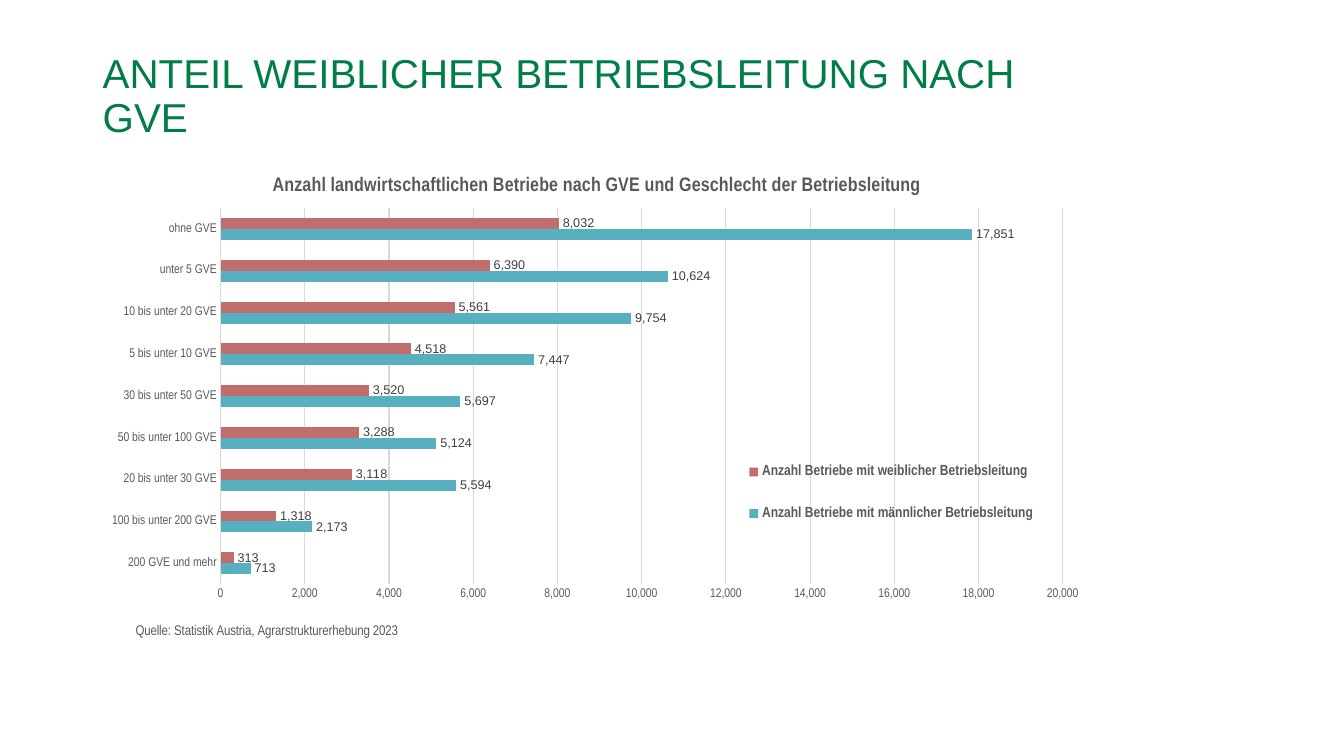
from lxml import etree
from pptx import Presentation
from pptx.chart.data import CategoryChartData
from pptx.dml.color import RGBColor
from pptx.enum.chart import XL_CHART_TYPE, XL_LABEL_POSITION, XL_LEGEND_POSITION, XL_TICK_MARK
from pptx.enum.text import MSO_ANCHOR
from pptx.oxml.ns import qn
from pptx.util import Inches, Pt

BAR_CLUSTERED = XL_CHART_TYPE.BAR_CLUSTERED
OUTSIDE_END = XL_LABEL_POSITION.OUTSIDE_END
LEGEND_BOTTOM = XL_LEGEND_POSITION.BOTTOM
NO_TICK = XL_TICK_MARK.NONE
MIDDLE = MSO_ANCHOR.MIDDLE

CATEGORIES = [
    "200 GVE und mehr", "100 bis unter 200 GVE", "20 bis unter 30 GVE",
    "50 bis unter 100 GVE", "30 bis unter 50 GVE", "5 bis unter 10 GVE",
    "10 bis unter 20 GVE", "unter 5 GVE", "ohne GVE",
]
SERIES = [
    ("Anzahl Betriebe mit männlicher Betriebsleitung", "58AFC0",
     [713, 2173, 5594, 5124, 5697, 7447, 9754, 10624, 17851]),
    ("Anzahl Betriebe mit weiblicher Betriebsleitung", "C06E6C",
     [313, 1318, 3118, 3288, 3520, 4518, 5561, 6390, 8032]),
]


def color(value):
    return RGBColor.from_string(value)


class SlideBuilder:
    FONT = "Arial"
    NARROW = "Arial Narrow"
    GREEN = "007E46"
    GRAY = "595959"
    DARK = "404040"
    GRID = "D9D9D9"
    NUMBER_FORMAT = "#,##0"

    def __init__(self, slide):
        self.slide = slide

    def set_font(self, font, size, value, name, bold=False):
        font.size = Pt(size)
        font.color.rgb = color(value)
        font.name = name
        font.bold = bold

    def place(self, element, inner=False, **fractions):
        """Fix a chart part at fractions of the chart's width and height."""
        for old_layout in element.findall(qn("c:layout")):
            element.remove(old_layout)
        layout = etree.Element(qn("c:layout"))
        manual = etree.SubElement(layout, qn("c:manualLayout"))
        settings = [("xMode", "edge"), ("yMode", "edge"), *fractions.items()]
        if inner:
            settings.insert(0, ("layoutTarget", "inner"))
        for name, value in settings:
            etree.SubElement(manual, qn("c:" + name)).set("val", str(value))
        overlay = element.find(qn("c:overlay"))
        if overlay is None:
            element.insert(0, layout)
        else:
            overlay.addprevious(layout)

    def heading(self, text, left, top, width, height):
        box = self.slide.shapes.add_textbox(
            Inches(left), Inches(top), Inches(width), Inches(height))
        frame = box.text_frame
        frame.word_wrap = True
        frame.vertical_anchor = MIDDLE
        paragraph = frame.paragraphs[0]
        paragraph.text = text
        paragraph.line_spacing = 0.9
        self.set_font(paragraph.font, 28.8, self.GREEN, self.FONT)

    def chart_text(self, title, text, size, bold, x, y):
        paragraph = title.text_frame.paragraphs[0]
        paragraph.text = text
        self.set_font(paragraph.font, size, self.GRAY, self.NARROW, bold)
        self.place(title._element, x=x, y=y)

    def axis(self, axis):
        axis.major_tick_mark = axis.minor_tick_mark = NO_TICK
        self.set_font(axis.tick_labels.font, 9, self.GRAY, self.NARROW)

    def bar_chart(self, title, source, left, top, width, height):
        data = CategoryChartData(number_format=self.NUMBER_FORMAT)
        data.categories = CATEGORIES
        for name, _, values in SERIES:
            data.add_series(name, values)
        chart = self.slide.shapes.add_chart(
            BAR_CLUSTERED, Inches(left), Inches(top),
            Inches(width), Inches(height), data).chart
        self.set_font(chart.font, 10, "000000", self.FONT)
        chart.has_title = True
        self.chart_text(chart.chart_title, title, 14, True, 0.175, 0.035)

        # Axes
        category_axis, value_axis = chart.category_axis, chart.value_axis
        self.axis(category_axis)
        self.axis(value_axis)
        value_axis.minimum_scale = 0
        value_axis.maximum_scale = 20000
        value_axis.major_unit = 2000
        value_axis.tick_labels.number_format = self.NUMBER_FORMAT
        value_axis.tick_labels.number_format_is_linked = False
        value_axis.format.line.fill.background()
        for line in (category_axis.format.line, value_axis.major_gridlines.format.line):
            line.color.rgb = color(self.GRID)
            line.width = Pt(0.75)
        value_axis.has_title = True
        self.chart_text(value_axis.axis_title, source, 10, False, 0.04, 0.89)

        # Bars and their values
        plot = chart.plots[0]
        plot.gap_width = 182
        plot.overlap = 0
        plot.vary_by_categories = False
        for series, (_, fill, _) in zip(plot.series, SERIES):
            series.format.fill.solid()
            series.format.fill.fore_color.rgb = color(fill)
            series.invert_if_negative = False
            labels = series.data_labels
            labels.show_value = True
            labels.position = OUTSIDE_END
            labels.number_format = self.NUMBER_FORMAT
            labels.number_format_is_linked = False
            self.set_font(labels.font, 9, self.DARK, self.FONT)
        plot_area = chart._chartSpace.chart.plotArea
        self.place(plot_area, inner=True, x=0.127, y=0.106, w=0.836, h=0.712)

        # Legend
        chart.has_legend = True
        legend = chart.legend
        legend.position = LEGEND_BOTTOM
        legend.include_in_layout = False
        self.set_font(legend.font, 10.5, self.GRAY, self.NARROW, True)
        self.place(legend._element, x=0.643, y=0.54, w=0.3, h=0.21)


def main():
    presentation = Presentation()
    presentation.slide_width = Inches(13.33)
    presentation.slide_height = Inches(7.5)
    builder = SlideBuilder(presentation.slides.add_slide(presentation.slide_layouts[6]))
    builder.heading("ANTEIL WEIBLICHER BETRIEBSLEITUNG NACH GVE", 0.92, 0.72, 9.99, 0.49)
    builder.bar_chart(
        "Anzahl landwirtschaftlichen Betriebe nach GVE und Geschlecht der Betriebsleitung",
        "Quelle: Statistik Austria, Agrarstrukturerhebung 2023",
        0.92, 1.51, 9.99, 5.24)
    presentation.save("out.pptx")


if __name__ == "__main__":
    main()
